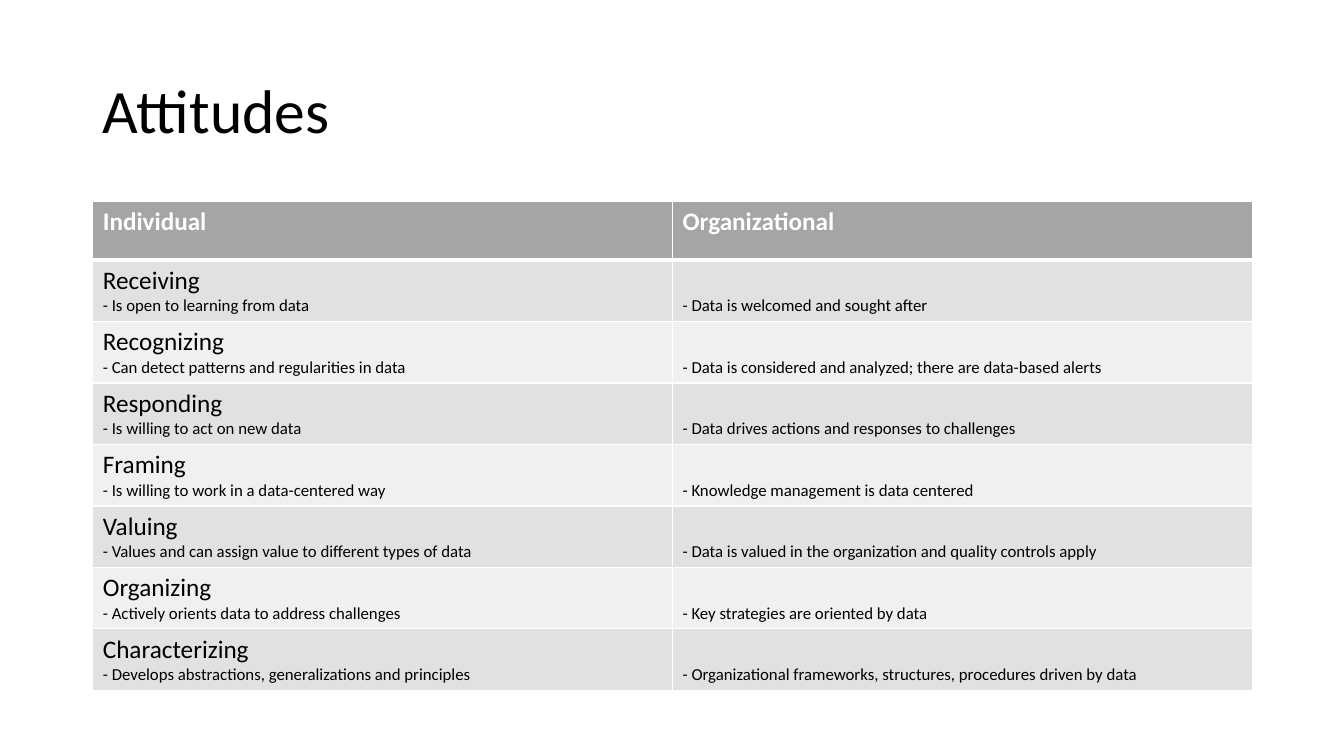
"""Build the Attitudes slide with its table of individual and organizational levels."""
from dataclasses import dataclass

from lxml import etree
from pptx import Presentation
from pptx.dml.color import RGBColor
from pptx.enum.text import MSO_ANCHOR
from pptx.oxml.ns import qn
from pptx.slide import Slide
from pptx.table import Table, _Cell
from pptx.text.text import _Paragraph
from pptx.util import Pt

MIDDLE, TOP, BOTTOM = MSO_ANCHOR.MIDDLE, MSO_ANCHOR.TOP, MSO_ANCHOR.BOTTOM
SCALE = 9144
FONT = "Calibri"
COLORS = {"text": "000000", "white": "FFFFFF", "head": "A5A5A5",
          "dark": "E1E1E1", "light": "F0F0F0"}
LEFT, WIDTH = 92, 1150
HEAD, ROW = 58, 61


@dataclass
class Level:
    name: str
    person: str
    group: str


LEVELS = [
    Level("Receiving", "Is open to learning from data",
          "Data is welcomed and sought after"),
    Level("Recognizing", "Can detect patterns and regularities in data",
          "Data is considered and analyzed; there are data-based alerts"),
    Level("Responding", "Is willing to act on new data",
          "Data drives actions and responses to challenges"),
    Level("Framing", "Is willing to work in a data-centered way",
          "Knowledge management is data centered"),
    Level("Valuing", "Values and can assign value to different types of data",
          "Data is valued in the organization and quality controls apply"),
    Level("Organizing", "Actively orients data to address challenges",
          "Key strategies are oriented by data"),
    Level("Characterizing", "Develops abstractions, generalizations and principles",
          "Organizational frameworks, structures, procedures driven by data"),
]


def px(count: int) -> int:
    return count * SCALE


def style(par: _Paragraph, size: int, color: str = "text", bold: bool = False) -> None:
    for run in par.runs:
        font = run.font
        font.name, font.size, font.bold = FONT, Pt(size), bold
        font.color.rgb = RGBColor.from_string(COLORS[color])


def border(cell: _Cell, top: int, bottom: int) -> None:
    props = cell._tc.get_or_add_tcPr()
    sides = {"a:lnL": 1, "a:lnR": 1, "a:lnT": top, "a:lnB": bottom}
    for spot, (tag, width) in enumerate(sides.items()):
        line = etree.Element(qn(tag), w=str(Pt(width)))
        fill = etree.SubElement(line, qn("a:solidFill"))
        etree.SubElement(fill, qn("a:srgbClr"), val=COLORS["white"])
        props.insert(spot, line)


def paint(cell: _Cell, fill: str, anchor: MSO_ANCHOR, top: int, bottom: int) -> None:
    cell.fill.solid()
    cell.fill.fore_color.rgb = RGBColor.from_string(COLORS[fill])
    cell.vertical_anchor = anchor
    border(cell, top, bottom)


def add_title(slide: Slide) -> None:
    frame = slide.shapes.add_textbox(px(LEFT), px(40), px(WIDTH), px(145)).text_frame
    frame.word_wrap = True
    frame.vertical_anchor = MIDDLE
    frame.text = "Attitudes"
    par = frame.paragraphs[0]
    par.line_spacing = 0.9
    style(par, 44)


def fill_head(table: Table) -> None:
    for col, label in enumerate(("Individual", "Organizational")):
        cell = table.cell(0, col)
        cell.text_frame.text = label
        style(cell.text_frame.paragraphs[0], 18, "white", True)
        paint(cell, "head", TOP, 1, 3)


def fill_level(table: Table, row: int, level: Level) -> None:
    for col, text in enumerate((f"{level.name}\n- {level.person}", f"- {level.group}")):
        cell = table.cell(row, col)
        cell.text_frame.text = text
        *heads, note = cell.text_frame.paragraphs
        for head in heads:
            style(head, 18)
        style(note, 12)
        paint(cell, "dark" if row % 2 else "light", BOTTOM, 3 if row == 1 else 1, 1)


def add_levels(slide: Slide) -> None:
    count = len(LEVELS)
    table = slide.shapes.add_table(count + 1, 2, px(LEFT), px(200), px(WIDTH),
                                   px(HEAD + ROW * count)).table
    table.horz_banding = False
    table.rows[0].height = px(HEAD)
    fill_head(table)
    for row, level in enumerate(LEVELS, 1):
        table.rows[row].height = px(ROW)
        fill_level(table, row, level)


def main() -> None:
    deck = Presentation()
    deck.slide_width, deck.slide_height = px(1333), px(750)
    slide = deck.slides.add_slide(deck.slide_layouts[6])
    add_title(slide)
    add_levels(slide)
    deck.save("out.pptx")


if __name__ == "__main__":
    main()
